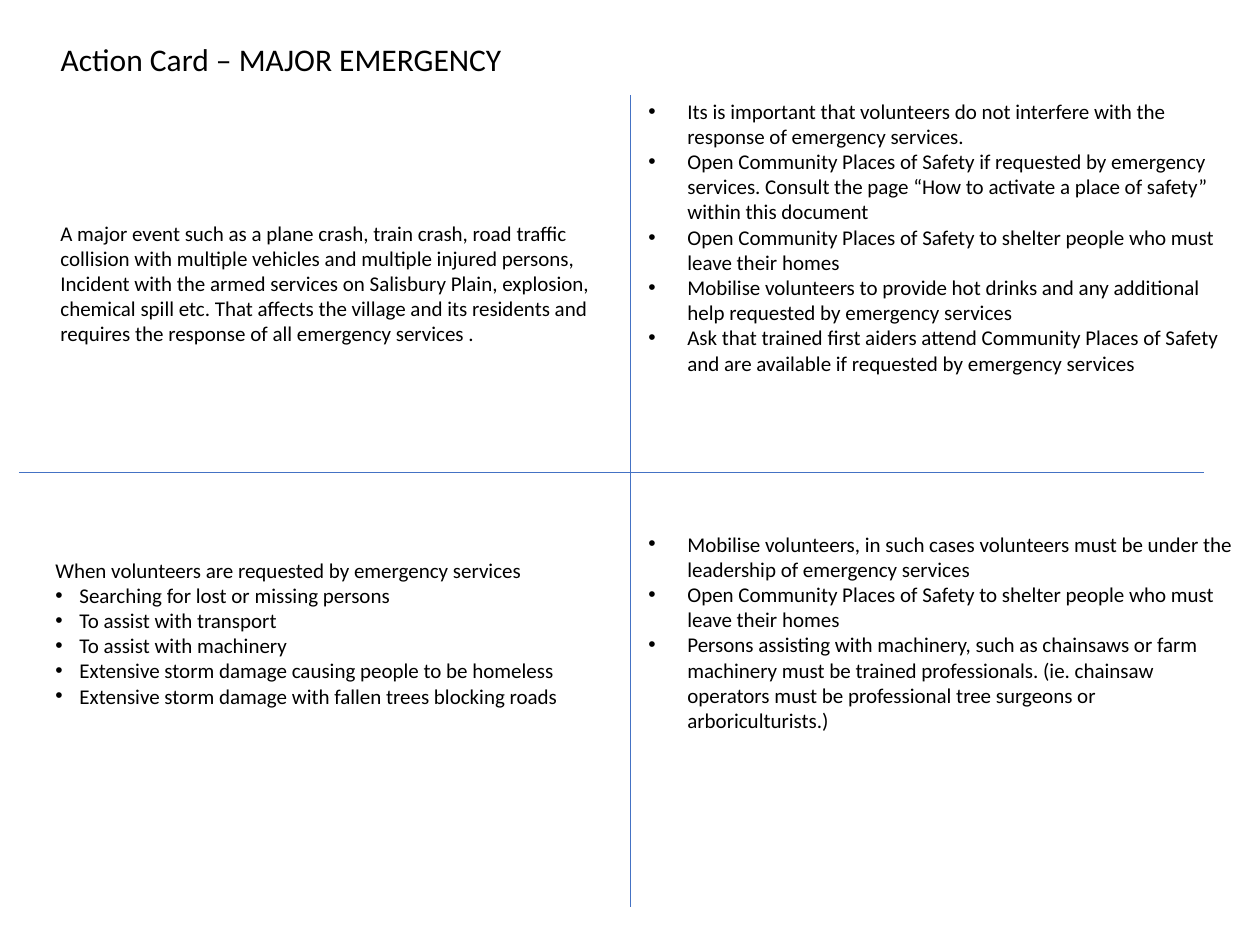
from dataclasses import dataclass

import pptx
import pptx.dml.color
import pptx.enum.shapes
import pptx.enum.text
import pptx.oxml
import pptx.oxml.ns
import pptx.util

PX_PER_INCH = 126


@dataclass(frozen=True)
class Theme:
    font: str = "Calibri"
    bullet_font: str = "Arial"
    text: str = "000000"
    divider: str = "4472C4"
    title_size: int = 18
    body_size: int = 12
    divider_width: float = 0.5


@dataclass(frozen=True)
class Box:
    left: int
    top: int
    width: int
    height: int


@dataclass(frozen=True)
class Quadrant:
    box: Box
    bullets: tuple[str, ...] = ()
    intro: str = ""
    bullet_indent: int = 39


@dataclass(frozen=True)
class Divider:
    start: tuple[int, int]
    end: tuple[int, int]


THEME = Theme()
SLIDE_SIZE = (1260, 945)
TITLE = "Action Card – MAJOR EMERGENCY"
TITLE_BOX = Box(48, 34, 803, 50)
SHELTER = "Open Community Places of Safety to shelter people who must leave their homes"

DIVIDERS = (
    Divider((630, 95), (630, 907)),
    Divider((19, 472), (1204, 472)),
)

QUADRANTS = (
    Quadrant(
        Box(48, 214, 563, 140),
        intro="A major event such as a plane crash, train crash, road traffic collision "
        "with multiple vehicles and multiple injured persons, Incident with the armed "
        "services on Salisbury Plain, explosion, chemical spill etc. That affects the "
        "village and its residents and requires the response of all emergency services .",
    ),
    Quadrant(
        Box(636, 92, 611, 292),
        (
            "Its is important that volunteers do not interfere with the response of "
            "emergency services.",
            "Open Community Places of Safety if requested by emergency services. Consult "
            "the page “How to activate a place of safety” within this document",
            SHELTER,
            "Mobilise volunteers to provide hot drinks and any additional help requested "
            "by emergency services",
            "Ask that trained first aiders attend Community Places of Safety and are "
            "available if requested by emergency services",
        ),
    ),
    Quadrant(
        Box(43, 551, 563, 165),
        (
            "Searching for lost or missing persons",
            "To assist with transport",
            "To assist with machinery",
            "Extensive storm damage causing people to be homeless",
            "Extensive storm damage with fallen trees blocking roads",
        ),
        intro="When volunteers are requested by emergency services",
        bullet_indent=24,
    ),
    Quadrant(
        Box(636, 525, 611, 217),
        (
            "Mobilise volunteers, in such cases volunteers must be under the leadership "
            "of emergency services",
            SHELTER,
            "Persons assisting with machinery, such as chainsaws or farm machinery must "
            "be trained professionals. (ie. chainsaw operators must be professional tree "
            "surgeons or arboriculturists.)",
        ),
    ),
)


def px(length: int) -> pptx.util.Emu:
    return pptx.util.Emu(round(length * pptx.util.Inches(1) / PX_PER_INCH))


def add_run(paragraph, text: str, size: int) -> None:
    run = paragraph.add_run()
    run.text = text
    run.font.name = THEME.font
    run.font.size = pptx.util.Pt(size)
    run.font.color.rgb = pptx.dml.color.RGBColor.from_string(THEME.text)


def set_bullet(paragraph, indent: int) -> None:
    """Give the paragraph a round bullet with a hanging indent."""
    properties = paragraph._p.get_or_add_pPr()
    properties.set("marL", str(px(indent)))
    properties.set("indent", str(-px(indent)))
    for tag, attribute, value in (
        ("a:buFont", "typeface", THEME.bullet_font),
        ("a:buChar", "char", "•"),
    ):
        element = pptx.oxml.parse_xml(f"<{tag} {pptx.oxml.ns.nsdecls('a')}/>")
        element.set(attribute, value)
        properties.append(element)


def add_title(slide) -> None:
    title = slide.shapes.title
    title.left, title.top = px(TITLE_BOX.left), px(TITLE_BOX.top)
    title.width, title.height = px(TITLE_BOX.width), px(TITLE_BOX.height)
    frame = title.text_frame
    frame.word_wrap = True
    frame.auto_size = pptx.enum.text.MSO_AUTO_SIZE.SHAPE_TO_FIT_TEXT
    frame.vertical_anchor = pptx.enum.text.MSO_ANCHOR.TOP
    paragraph = frame.paragraphs[0]
    paragraph.alignment = pptx.enum.text.PP_ALIGN.LEFT
    add_run(paragraph, TITLE, THEME.title_size)


def add_divider(slide, divider: Divider) -> None:
    connector = slide.shapes.add_connector(
        pptx.enum.shapes.MSO_CONNECTOR.STRAIGHT,
        *map(px, divider.start + divider.end),
    )
    connector.line.color.rgb = pptx.dml.color.RGBColor.from_string(THEME.divider)
    connector.line.width = pptx.util.Pt(THEME.divider_width)
    connector._element.spPr.append(
        pptx.oxml.parse_xml(f"<a:effectLst {pptx.oxml.ns.nsdecls('a')}/>")
    )


def add_quadrant(slide, quadrant: Quadrant) -> None:
    box = quadrant.box
    shape = slide.shapes.add_textbox(
        px(box.left), px(box.top), px(box.width), px(box.height)
    )
    frame = shape.text_frame
    frame.word_wrap = True
    frame.auto_size = pptx.enum.text.MSO_AUTO_SIZE.SHAPE_TO_FIT_TEXT
    lines = ((quadrant.intro,) if quadrant.intro else ()) + quadrant.bullets
    for index, text in enumerate(lines):
        paragraph = frame.add_paragraph() if index else frame.paragraphs[0]
        if index or not quadrant.intro:
            set_bullet(paragraph, quadrant.bullet_indent)
        add_run(paragraph, text, THEME.body_size)


def main() -> None:
    presentation = pptx.Presentation()
    presentation.slide_width, presentation.slide_height = map(px, SLIDE_SIZE)
    title_only = presentation.slide_layouts.get_by_name("Title Only")
    slide = presentation.slides.add_slide(title_only)
    add_title(slide)
    for divider in DIVIDERS:
        add_divider(slide, divider)
    for quadrant in QUADRANTS:
        add_quadrant(slide, quadrant)
    presentation.save("out.pptx")


if __name__ == "__main__":
    main()
